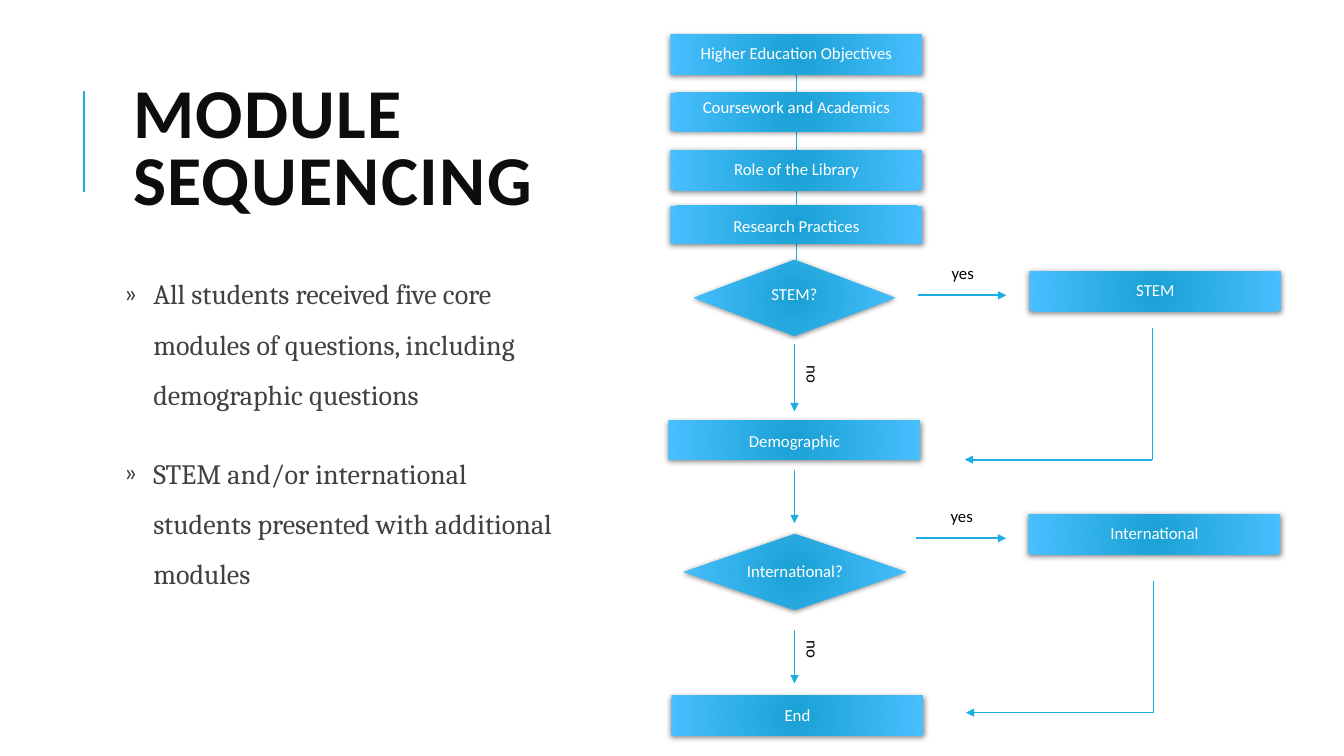
from dataclasses import dataclass

from lxml.etree import SubElement
from pptx import Presentation
from pptx.dml.color import RGBColor as Rgb
from pptx.enum.shapes import MSO_CONNECTOR as Conn, MSO_SHAPE as Geom
from pptx.enum.text import MSO_ANCHOR as Anchor, MSO_AUTO_SIZE as Fit, PP_ALIGN as Align
from pptx.oxml import parse_xml
from pptx.oxml.ns import nsdecls, qn
from pptx.util import Emu, Pt

PX = 9144  # EMU per px, 100 px to the inch
HUES = {
    "line": "1CADE4", "core": "1AA1D4", "edge": "48BFFF", "head": "0D0D0D",
    "body": "414042", "label": "FFFFFF", "note": "000000", "shade": "000000",
}
MARGINS = ("margin_left", "margin_top", "margin_right", "margin_bottom")
FONTS = {
    "head": {"name": "Calibri", "size": Pt(50), "bold": True},
    "body": {"name": "Cambria", "size": Pt(20)},
    "label": {"name": "Calibri", "size": Pt(12)},
    "note": {"name": "Calibri", "size": Pt(12)},
}
PARAS = {
    "head": {"line_spacing": 0.8},
    "body": {"line_spacing": 1.5, "space_before": Pt(20)},
    "label": {"line_spacing": 0.9, "alignment": Align.CENTER},
    "note": {},
}


@dataclass
class Step:
    text: str
    x: int
    y: int
    w: int = 250
    h: int = 40
    shift: int = 0  # how far the label sits below the middle
    geom: Geom = Geom.RECTANGLE


@dataclass
class Wire:
    x1: int
    y1: int
    x2: int
    y2: int
    arrow: bool = True
    width: float = 1.25


@dataclass
class Note:
    text: str
    x: int
    y: int
    w: int
    turn: int = 0


STEPS = [
    Step("Higher Education Objectives", 665, 34),
    Step("Coursework and Academics", 665, 92, h=38, shift=-4),
    Step("Role of the Library", 665, 149),
    Step("Research Practices", 665, 204, h=38, shift=2),
    Step("STEM?", 688, 258, 200, 75, -3, Geom.DIAMOND),
    Step("Demographic", 663, 417, h=39, shift=2),
    Step("International?", 678, 530, 221, 75, 0, Geom.DIAMOND),
    Step("End", 666, 690),
    Step("STEM", 1021, 269),
    Step("International", 1020, 510),
]
RULES = [
    Wire(83, 190, 83, 90, False, 1.5),
    Wire(790, 74, 790, 267, False),
]
ARROWS = [
    Wire(910, 293, 998, 293),
    Wire(909, 534, 998, 534),
    Wire(788, 341, 788, 408),
    Wire(788, 466, 788, 519),
    Wire(788, 625, 788, 678),
]
BENDS = [(1143, 325, 957, 456), (1144, 576, 958, 707)]
NOTES = [
    Note("yes", 934, 256, 44),
    Note("yes", 933, 497, 44),
    Note("no", 787, 357, 39, 90),
    Note("no", 787, 630, 39, 90),
]
POINTS = [
    "All students received five core modules of questions, including demographic questions",
    "STEM and/or international students presented with additional modules",
]


def px(*sizes: int) -> list[Emu]:
    return [Emu(size * PX) for size in sizes]


def style(target, values: dict) -> None:
    for name, value in values.items():
        setattr(target, name, value)


def write(frame, lines: list[str], kind: str) -> None:
    for i, line in enumerate(lines):
        para = frame.add_paragraph() if i else frame.paragraphs[0]
        para.text = line
        style(para, PARAS[kind])
        for run in para.runs:
            style(run.font, FONTS[kind])
            run.font.color.rgb = Rgb.from_string(HUES[kind])


def add_text(slide, box: tuple, lines: list[str], kind: str, values: dict):
    shape = slide.shapes.add_textbox(*px(*box))
    style(shape.text_frame, values)
    write(shape.text_frame, lines, kind)
    return shape


def add_glow(shape) -> None:
    """Give the shape its round gradient and soft shadow."""
    shape.line.fill.background()
    shape.shadow.inherit = False
    props = shape.element.spPr
    props.find(qn("a:ln")).addprevious(parse_xml(
        f'<a:gradFill {nsdecls("a")} rotWithShape="1"><a:gsLst>'
        f'<a:gs pos="0"><a:srgbClr val="{HUES["core"]}"/></a:gs>'
        f'<a:gs pos="100000"><a:srgbClr val="{HUES["edge"]}"/></a:gs></a:gsLst>'
        '<a:path path="circle">'
        '<a:fillToRect l="100000" t="100000" r="100000" b="100000"/>'
        '</a:path></a:gradFill>'))
    props.find(qn("a:effectLst")).append(parse_xml(
        f'<a:outerShdw {nsdecls("a")} blurRad="{Pt(4)}" dist="{Pt(1)}" dir="5400000" '
        f'rotWithShape="0"><a:srgbClr val="{HUES["shade"]}"><a:alpha val="50000"/>'
        '</a:srgbClr></a:outerShdw>'))


def add_step(slide, step: Step) -> None:
    shape = slide.shapes.add_shape(step.geom, *px(step.x, step.y, step.w, step.h))
    add_glow(shape)
    top, base = 1 + max(2 * step.shift, 0), 1 + max(-2 * step.shift, 0)
    frame = shape.text_frame
    style(frame, dict(zip(MARGINS, px(1, top, 1, base))))
    style(frame, {"word_wrap": False, "vertical_anchor": Anchor.MIDDLE})
    write(frame, [step.text], "label")


def add_wire(slide, wire: Wire) -> None:
    ends = px(wire.x1, wire.y1, wire.x2, wire.y2)
    link = slide.shapes.add_connector(Conn.STRAIGHT, *ends)
    link.line.color.rgb = Rgb.from_string(HUES["line"])
    link.line.width = Pt(wire.width)
    if wire.arrow:
        SubElement(link.line._get_or_add_ln(), qn("a:tailEnd"), type="triangle")
    SubElement(link.element.spPr, qn("a:effectLst"))


def add_note(slide, note: Note) -> None:
    box = (note.x, note.y, note.w, 30)
    values = {"word_wrap": False, "auto_size": Fit.SHAPE_TO_FIT_TEXT}
    add_text(slide, box, [note.text], "note", values).rotation = note.turn


def add_head(slide) -> None:
    values = {"word_wrap": False, **dict.fromkeys(MARGINS, 0)}
    shape = add_text(slide, (132, 84, 657, 75), ["MODULE \vSEQUENCING"], "head", values)
    for run in shape.text_frame.paragraphs[0].runs:
        run.font._element.set("spc", "100")


def add_body(slide) -> None:
    values = {"word_wrap": True, **dict.fromkeys(MARGINS, 0)}
    shape = add_text(slide, (123, 258, 435, 384), POINTS, "body", values)
    for para in shape.text_frame.paragraphs:
        props = para._p.get_or_add_pPr()
        props.set("marL", str(29 * PX))
        props.set("indent", str(-29 * PX))
        tint = SubElement(props, qn("a:buClr"))
        SubElement(tint, qn("a:srgbClr"), val=HUES["body"])
        SubElement(props, qn("a:buSzPct"), val="92000")
        SubElement(props, qn("a:buFont"), typeface="Calibri")
        SubElement(props, qn("a:buChar"), char="»")


def main() -> None:
    deck = Presentation()
    deck.slide_width, deck.slide_height = px(1333, 750)
    slide = deck.slides.add_slide(deck.slide_layouts[6])
    add_head(slide)
    add_body(slide)
    for rule in RULES:
        add_wire(slide, rule)
    for step in STEPS:
        add_step(slide, step)
    for arrow in ARROWS:
        add_wire(slide, arrow)
    for x, top, end, base in BENDS:
        add_wire(slide, Wire(x, top, x, base, False))
        add_wire(slide, Wire(x, base, end, base))
    for note in NOTES:
        add_note(slide, note)
    deck.save("out.pptx")


if __name__ == "__main__":
    main()
